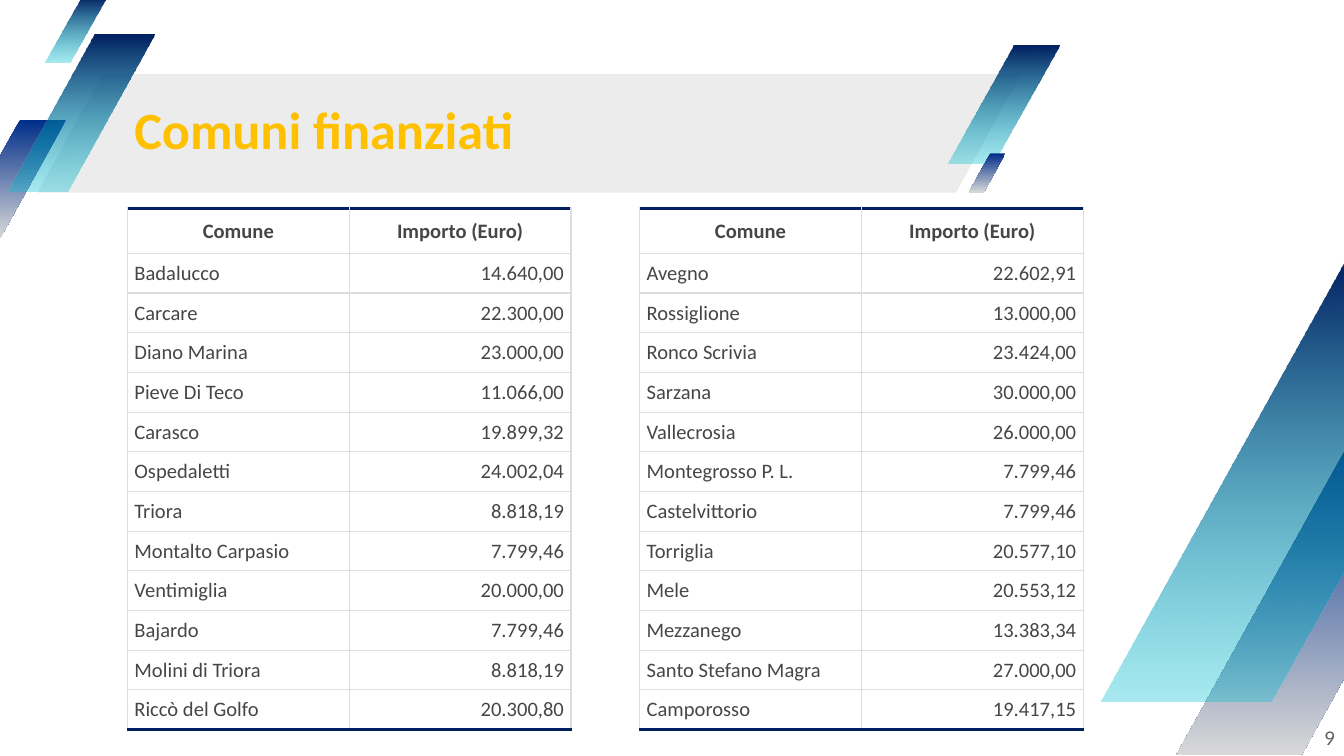
import pptx
import pptx.dml.color
import pptx.enum.shapes
import pptx.enum.text
import pptx.oxml
import pptx.oxml.ns
import pptx.util
from pptx.dml.color import RGBColor
from pptx.util import Cm

NAVY = RGBColor(0x00, 0x20, 0x60)
BLUE = RGBColor(0x00, 0x2D, 0x89)
TEAL = RGBColor(0x02, 0xC1, 0xD3)
SILVER = RGBColor(0xD8, 0xD8, 0xD8)
BAND_GREY = RGBColor(0xEC, 0xEC, 0xEC)
GRID_GREY = RGBColor(0xDD, 0xDD, 0xDD)
TEXT_GREY = RGBColor(0x46, 0x46, 0x46)
NUMBER_GREY = RGBColor(0x5E, 0x5E, 0x5E)
YELLOW = RGBColor(0xFF, 0xC0, 0x00)
DARK_YELLOW = RGBColor(0xF2, 0xB8, 0x00)

ALIGN = pptx.enum.text.PP_ALIGN
MIDDLE = pptx.enum.text.MSO_ANCHOR.MIDDLE

# Gradients from top to bottom: first colour, last colour, opacity of the last
TEAL_FADE = (NAVY, TEAL, 34)
SILVER_FADE = (BLUE, SILVER, 100)


def line_xml(tag, color, points):
    return pptx.oxml.parse_xml(
        f'<a:{tag} {pptx.oxml.ns.nsdecls("a")} w="{int(points * 12700)}">'
        f'<a:solidFill><a:srgbClr val="{color}"/></a:solidFill></a:{tag}>')


class SlideBuilder:
    font_name = "Calibri"
    table_size = 11
    header_height = 0.85
    row_height = 0.75
    column_width = 4.19
    cell_margin = Cm(0.13)

    def __init__(self, slide):
        self.slide = slide

    def parallelogram(self, left, top, width, height, slant=0.59,
                      color=None, fade=None):
        shape = self.slide.shapes.add_shape(
            pptx.enum.shapes.MSO_SHAPE.PARALLELOGRAM,
            Cm(left), Cm(top), Cm(width), Cm(height))
        shape.adjustments[0] = slant
        shape.shadow.inherit = False
        shape.line.fill.background()
        if fade is None:
            shape.fill.solid()
            shape.fill.fore_color.rgb = color
            return
        first, last, opacity = fade
        shape.fill.gradient()
        shape.fill.gradient_angle = 270
        for stop, stop_color, position in zip(
                shape.fill.gradient_stops, (first, last), (0, 1)):
            stop.color.rgb = stop_color
            stop.position = position
        if opacity < 100:
            last_color = shape.element.spPr.xpath(".//a:gs/a:srgbClr")[-1]
            last_color.append(pptx.oxml.parse_xml(
                f'<a:alpha {pptx.oxml.ns.nsdecls("a")} val="{opacity * 1000}"/>'))

    def format_text(self, paragraph, size, color, bold=False,
                    align=ALIGN.LEFT, font_name=None):
        paragraph.alignment = align
        for run in paragraph.runs:
            run.font.name = font_name or self.font_name
            run.font.size = pptx.util.Pt(size)
            run.font.bold = bold
            run.font.color.rgb = color

    def text(self, text, left, top, width, height, size, color, **style):
        box = self.slide.shapes.add_textbox(
            Cm(left), Cm(top), Cm(width), Cm(height))
        frame = box.text_frame
        frame.word_wrap = True
        frame.vertical_anchor = MIDDLE
        frame.margin_left = frame.margin_right = 0
        frame.margin_top = frame.margin_bottom = 0
        frame.text = text
        self.format_text(frame.paragraphs[0], size, color, **style)
        return frame.paragraphs[0]

    def title(self, text, left, top, width, height):
        paragraph = self.text(text, left, top, width, height, 28, YELLOW, bold=True)
        paragraph.line_spacing = 0.9
        properties = paragraph.runs[0].font._element
        properties.insert(0, line_xml("ln", DARK_YELLOW, 0.75))

    def cell(self, cell, text, align, is_first, is_last):
        cell.text_frame.text = text
        cell.vertical_anchor = MIDDLE
        cell.margin_left = cell.margin_right = self.cell_margin
        cell.margin_top = cell.margin_bottom = 0
        cell.fill.background()
        self.format_text(cell.text_frame.paragraphs[0], self.table_size,
                         TEXT_GREY, is_first, align)
        thin, thick = (GRID_GREY, 0.75), (NAVY, 1.5)
        borders = {"lnL": thin, "lnR": thin,
                   "lnT": thick if is_first else thin,
                   "lnB": thick if is_last else thin}
        properties = cell._tc.get_or_add_tcPr()
        for index, (tag, border) in enumerate(borders.items()):
            properties.insert(index, line_xml(tag, *border))

    def table(self, left, top, header, rows):
        lines = [header, *rows]
        height = self.header_height + self.row_height * len(rows)
        table = self.slide.shapes.add_table(
            len(lines), len(header), Cm(left), Cm(top),
            Cm(self.column_width * len(header)), Cm(height)).table
        table.first_row = table.horz_banding = False
        for column in table.columns:
            column.width = Cm(self.column_width)
        last = len(lines) - 1
        for row_index, values in enumerate(lines):
            is_first = row_index == 0
            table.rows[row_index].height = Cm(
                self.header_height if is_first else self.row_height)
            aligns = [ALIGN.CENTER] * 2 if is_first else [ALIGN.LEFT, ALIGN.RIGHT]
            for column_index, (value, align) in enumerate(zip(values, aligns)):
                self.cell(table.cell(row_index, column_index), value, align,
                          is_first, row_index == last)


HEADER = ("Comune", "Importo (Euro)")
LEFT_ROWS = [
    ("Badalucco", "14.640,00"), ("Carcare", "22.300,00"),
    ("Diano Marina", "23.000,00"), ("Pieve Di Teco", "11.066,00"),
    ("Carasco", "19.899,32"), ("Ospedaletti", "24.002,04"),
    ("Triora", "8.818,19"), ("Montalto Carpasio", "7.799,46"),
    ("Ventimiglia", "20.000,00"), ("Bajardo", "7.799,46"),
    ("Molini di Triora", "8.818,19"), ("Riccò del Golfo", "20.300,80"),
]
RIGHT_ROWS = [
    ("Avegno", "22.602,91"), ("Rossiglione", "13.000,00"),
    ("Ronco Scrivia", "23.424,00"), ("Sarzana", "30.000,00"),
    ("Vallecrosia", "26.000,00"), ("Montegrosso P. L.", "7.799,46"),
    ("Castelvittorio", "7.799,46"), ("Torriglia", "20.577,10"),
    ("Mele", "20.553,12"), ("Mezzanego", "13.383,34"),
    ("Santo Stefano Magra", "27.000,00"), ("Camporosso", "19.417,15"),
]
STRIPES = [
    (-0.86, 2.26, 2.11, 2.24, SILVER_FADE),
    (17.91, 0.86, 2.11, 2.24, TEAL_FADE),
    (0.15, 0.66, 2.77, 2.97, TEAL_FADE),
    (0.84, -0.05, 1.17, 1.24, TEAL_FADE),
    (18.31, 2.9, 0.69, 0.74, SILVER_FADE),
    (22.23, 8.13, 5.77, 6.15, SILVER_FADE),
    (20.8, 4.88, 7.87, 8.38, TEAL_FADE),
]


def main():
    presentation = pptx.Presentation()
    presentation.slide_width = Cm(25.4)
    presentation.slide_height = Cm(14.29)
    builder = SlideBuilder(
        presentation.slides.add_slide(presentation.slide_layouts[6]))

    # Title band and slanted stripes
    builder.parallelogram(0.71, 1.4, 18.59, 2.24, slant=0.55, color=BAND_GREY)
    for *bounds, fade in STRIPES:
        builder.parallelogram(*bounds, fade=fade)

    # Title
    builder.title("Comuni finanziati", 2.54, 1.37, 16.74, 2.26)

    # Funded municipalities
    for left, rows in ((2.41, LEFT_ROWS), (12.09, RIGHT_ROWS)):
        builder.table(left, 3.94, HEADER, rows)

    # Slide number
    builder.text("9", 24.05, 13.41, 1.19, 1.09, 10, NUMBER_GREY,
                 align=ALIGN.RIGHT, font_name="Lato")

    presentation.save("out.pptx")


if __name__ == "__main__":
    main()
